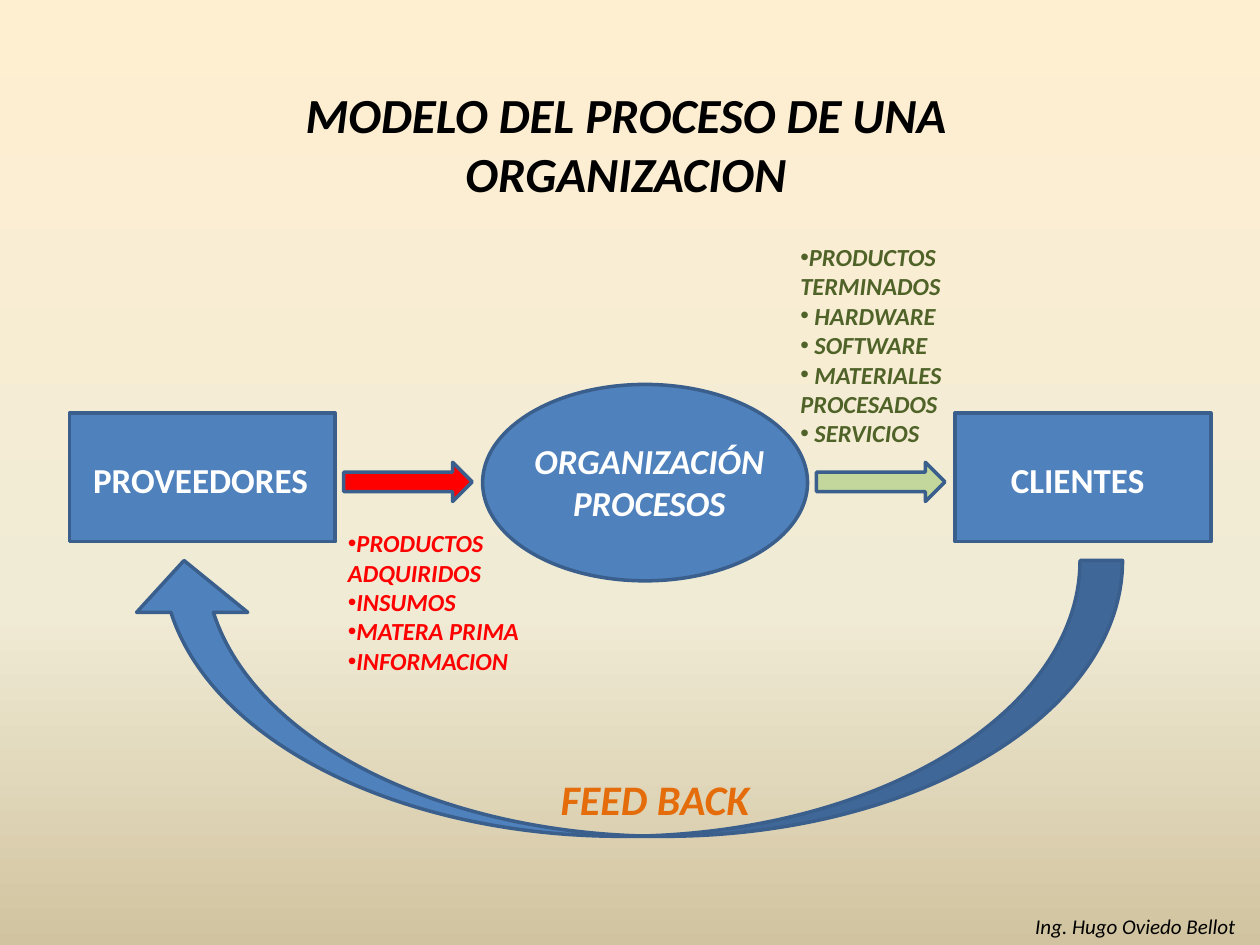
from lxml.etree import SubElement
from pptx import Presentation
from pptx.dml.color import RGBColor
from pptx.enum.shapes import MSO_SHAPE
from pptx.enum.text import MSO_ANCHOR, MSO_AUTO_SIZE, PP_ALIGN
from pptx.oxml.ns import qn
from pptx.util import Cm, Pt

# Content: positions are left, top, width, height in cm
FONT = "Calibri"
BLUE, EDGE, WHITE, BLACK = "4F81BD", "3A5F8C", "FFFFFF", "000000"
RED, GREEN = "FF0000", "4F6228"
BACKGROUND = [(0, "FFEFD1"), (65, "F0EBD5"), (100, "D1C39F")]

TITLE = ("MODELO DEL PROCESO DE UNA ORGANIZACION", (3.38, 1.57, 18.47, 2.64))
LISTS = [
    (["PRODUCTOS ADQUIRIDOS", "INSUMOS", "MATERA PRIMA", "INFORMACION"],
     (6.76, 10.52, 3.96, 3.25), RED),
    (["PRODUCTOS TERMINADOS", " HARDWARE", " SOFTWARE", " MATERIALES PROCESADOS", " SERVICIOS"],
     (15.88, 4.75, 3.58, 4.45), GREEN),
]
SHAPES = [
    (MSO_SHAPE.RECTANGLE, (1.4, 8.33, 5.36, 2.59), BLUE),
    (MSO_SHAPE.RECTANGLE, (19.25, 8.33, 5.16, 2.59), BLUE),
    (MSO_SHAPE.OVAL, (9.73, 7.75, 6.55, 3.96), BLUE),
    (MSO_SHAPE.RIGHT_ARROW, (6.93, 9.32, 2.59, 0.79), RED),
    (MSO_SHAPE.RIGHT_ARROW, (16.46, 9.32, 2.59, 0.79), "C3D69B"),
]
FEEDBACK_ARROW = (2.59, 11.3, 20.04, 5.56)
FEEDBACK_ADJUSTMENTS = (0.154, 0.403, 0.188)
LABELS = [
    (["PROVEEDORES"], (1.57, 9.12, 4.95, 1.12), dict(size=20, color=WHITE, italic=False)),
    (["ORGANIZACIÓN", "PROCESOS"], (10.31, 8.74, 5.56, 1.96), dict(size=20, color=WHITE)),
    (["CLIENTES"], (19.25, 9.12, 4.95, 1.12), dict(size=20, color=WHITE, italic=False)),
    (["FEED BACK"], (10.92, 15.47, 4.57, 1.27), dict(size=24, color="E46C0A")),
    (["Ing. Hugo Oviedo Bellot"], (20.62, 18.29, 4.78, 0.76),
     dict(size=12, color=BLACK, bold=False, align=PP_ALIGN.LEFT)),
]


def rgb(value):
    return RGBColor.from_string(value)


def place(box, position):
    box.left, box.top, box.width, box.height = map(Cm, position)


def write(box, lines, size, color, bold=True, italic=True,
          align=PP_ALIGN.CENTER, bullet=False):
    frame = box.text_frame
    frame.word_wrap = True
    frame.auto_size = MSO_AUTO_SIZE.NONE
    frame.vertical_anchor = MSO_ANCHOR.TOP
    for number, line in enumerate(lines):
        para = frame.add_paragraph() if number else frame.paragraphs[0]
        para.alignment = align
        para.space_before = Pt(0)
        if bullet:
            properties = para._p.get_or_add_pPr()
            properties.set("marL", "0")
            properties.set("indent", "0")
            SubElement(properties, qn("a:buFont"), typeface="Arial")
            SubElement(properties, qn("a:buChar"), char="•")
        span = para.add_run()
        span.text = line
        font = span.font
        font.name, font.size, font.bold, font.italic = FONT, Pt(size), bold, italic
        font.color.rgb = rgb(color)


def add_shape(slide, kind, position, color):
    shape = slide.shapes.add_shape(kind, *map(Cm, position))
    shape.shadow.inherit = False
    shape.fill.solid()
    shape.fill.fore_color.rgb = rgb(color)
    shape.line.color.rgb = rgb(EDGE)
    shape.line.width = Pt(2)
    return shape


def paint_background(slide):
    fill = slide.background.fill
    fill.gradient()
    fill.gradient_angle = 270  # counter-clockwise: top to bottom
    stops = slide.background._cSld.find(".//" + qn("a:gsLst"))
    for stop in list(stops):
        stops.remove(stop)
    for percent, color in BACKGROUND:
        stop = SubElement(stops, qn("a:gs"), pos=str(percent * 1000))
        SubElement(stop, qn("a:srgbClr"), val=color)


def main():
    deck = Presentation()
    deck.slide_width, deck.slide_height = Cm(25.4), Cm(19.05)
    slide = deck.slides.add_slide(deck.slide_layouts.get_by_name("Two Content"))
    paint_background(slide)

    # Title and the two lists
    title_text, title_position = TITLE
    title, *bodies = list(slide.placeholders)[:3]
    place(title, title_position)
    write(title, [title_text], size=28, color=BLACK)
    for body, (items, position, color) in zip(bodies, LISTS):
        place(body, position)
        write(body, items, size=14, color=color, align=PP_ALIGN.LEFT, bullet=True)

    # Process stages, flow arrows and feedback loop
    for kind, position, color in SHAPES:
        add_shape(slide, kind, position, color)
    loop = add_shape(slide, MSO_SHAPE.CURVED_UP_ARROW, FEEDBACK_ARROW, BLUE)
    for index, value in enumerate(FEEDBACK_ADJUSTMENTS):
        loop.adjustments[index] = value
    loop._element.spPr.find(qn("a:xfrm")).set("flipH", "1")

    # Labels
    for lines, position, style in LABELS:
        write(slide.shapes.add_textbox(*map(Cm, position)), lines, **style)

    deck.save("out.pptx")


if __name__ == "__main__":
    main()
